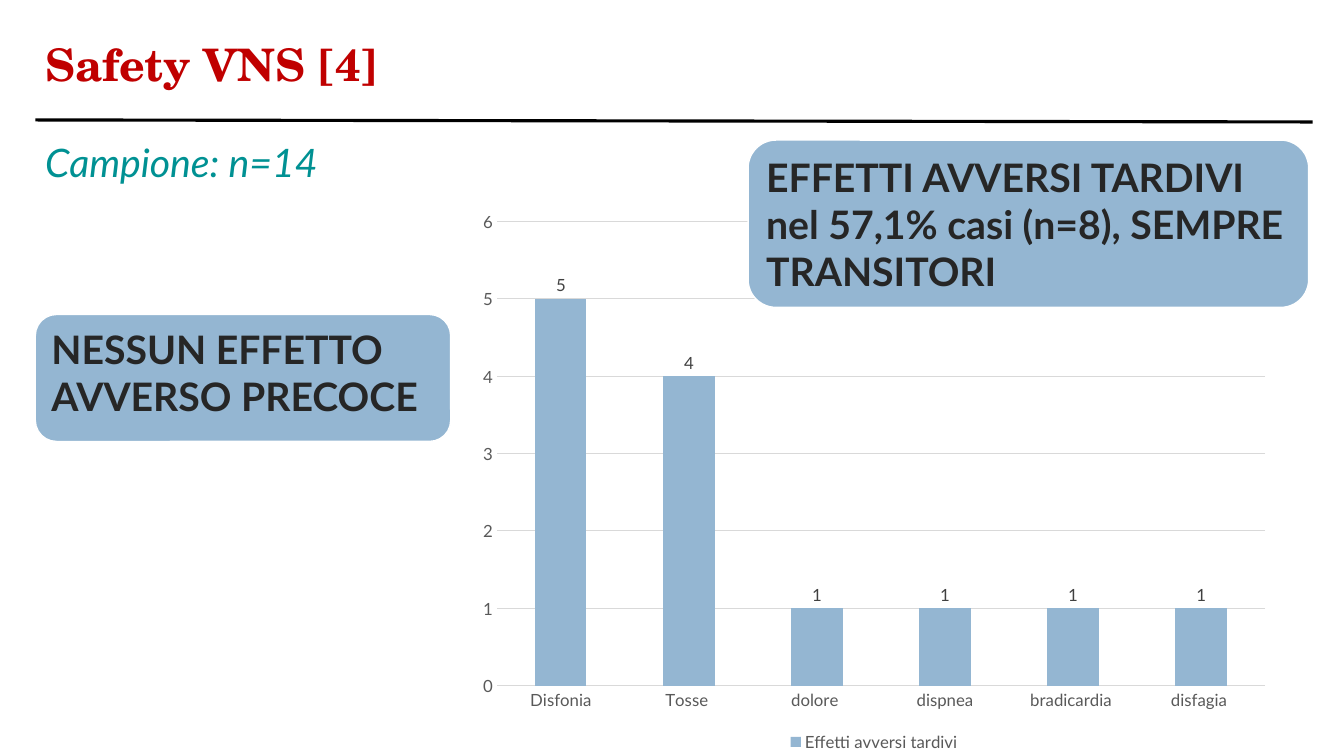
from dataclasses import dataclass

from lxml import etree
from pptx import Presentation
from pptx.chart.data import CategoryChartData
from pptx.dml.color import RGBColor
from pptx.enum.chart import XL_CHART_TYPE, XL_LABEL_POSITION, XL_LEGEND_POSITION, XL_TICK_MARK
from pptx.enum.shapes import MSO_CONNECTOR, MSO_SHAPE
from pptx.enum.text import MSO_ANCHOR, PP_ALIGN
from pptx.oxml.ns import qn
from pptx.util import Inches, Pt

COLUMN = XL_CHART_TYPE.COLUMN_CLUSTERED
OUTSIDE_END = XL_LABEL_POSITION.OUTSIDE_END
LEGEND_BOTTOM = XL_LEGEND_POSITION.BOTTOM
NO_TICK = XL_TICK_MARK.NONE
STRAIGHT = MSO_CONNECTOR.STRAIGHT
ROUNDED = MSO_SHAPE.ROUNDED_RECTANGLE
TOP, MIDDLE = MSO_ANCHOR.TOP, MSO_ANCHOR.MIDDLE
LEFT = PP_ALIGN.LEFT


@dataclass(frozen=True)
class Theme:
    heading_font: str = "TeX Gyre Schola"
    body_font: str = "Lato"
    title_size: float = 32
    body_size: float = 28
    chart_size: float = 12
    red: str = "C00000"
    teal: str = "009193"
    blue: str = "94B6D2"
    white: str = "FFFFFF"
    black: str = "000000"
    dark: str = "262626"
    label: str = "404040"
    axis: str = "595959"
    grid: str = "D9D9D9"


THEME = Theme()


def rgb(value):
    return RGBColor.from_string(value)


def style_font(font, name, size, color, bold=False, italic=False):
    font.name = name
    font.size = Pt(size)
    font.color.rgb = rgb(color)
    font.bold = bold
    font.italic = italic


def write_text(shape, text, anchor, name, size, color, **emphasis):
    frame = shape.text_frame
    frame.word_wrap = True
    frame.vertical_anchor = anchor
    paragraph = frame.paragraphs[0]
    paragraph.alignment = LEFT
    run = paragraph.add_run()
    run.text = text
    style_font(run.font, name, size, color, **emphasis)
    return paragraph


def add_header(slide, box, text):
    left, top, width, height = box
    title = slide.shapes.title
    title.left, title.top, title.width, title.height = map(Inches, box)
    paragraph = write_text(title, text, MIDDLE, THEME.heading_font,
                           THEME.title_size, THEME.red, bold=True)
    paragraph.line_spacing = 0.9
    rule_top = top + 1.25
    rule = slide.shapes.add_connector(
        STRAIGHT, Inches(left), Inches(rule_top),
        Inches(left + width), Inches(rule_top + 0.02))
    rule.line.color.rgb = rgb(THEME.black)
    rule.line.width = Pt(2.25)
    etree.SubElement(rule._element.spPr, qn("a:effectLst"))


def add_sample_size(slide, box, text):
    textbox = slide.shapes.add_textbox(*map(Inches, box))
    write_text(textbox, text, TOP, THEME.body_font, THEME.body_size, THEME.teal, italic=True)


def add_callout(slide, box, text):
    callout = slide.shapes.add_shape(ROUNDED, *map(Inches, box))
    callout.shadow.inherit = False
    callout.fill.solid()
    callout.fill.fore_color.rgb = rgb(THEME.blue)
    callout.line.color.rgb = rgb(THEME.white)
    callout.line.width = Pt(1)
    write_text(callout, text, TOP, THEME.body_font, THEME.body_size, THEME.dark, bold=True)


def style_chart_font(font, color):
    style_font(font, THEME.body_font, THEME.chart_size, color)


def add_effects_chart(slide, box, name, effects):
    data = CategoryChartData()
    data.categories = list(effects)
    data.add_series(name, list(effects.values()))
    chart = slide.shapes.add_chart(COLUMN, *map(Inches, box), data).chart
    style_chart_font(chart.font, THEME.axis)
    chart.has_title = False
    chart.has_legend = True
    chart.legend.position = LEGEND_BOTTOM
    chart.legend.include_in_layout = False
    style_chart_font(chart.legend.font, THEME.axis)

    for axis in (chart.category_axis, chart.value_axis):
        axis.major_tick_mark = axis.minor_tick_mark = NO_TICK
        axis.format.line.fill.background()
        style_chart_font(axis.tick_labels.font, THEME.axis)
    value_axis = chart.value_axis
    value_axis.minimum_scale, value_axis.maximum_scale, value_axis.major_unit = 0, 6, 1
    grid_line = value_axis.major_gridlines.format.line
    grid_line.color.rgb = rgb(THEME.grid)
    grid_line.width = Pt(0.75)

    plot = chart.plots[0]
    plot.gap_width = 150
    plot.vary_by_categories = False
    series = plot.series[0]
    series.format.fill.solid()
    series.format.fill.fore_color.rgb = rgb(THEME.blue)
    labels = series.data_labels
    labels.show_value = True
    labels.position = OUTSIDE_END
    style_chart_font(labels.font, THEME.label)


def build_safety_slide(presentation):
    slide = presentation.slides.add_slide(presentation.slide_layouts[5])
    margin = 0.35
    add_header(slide, (margin, -0.06, 12.67, 1.45), "Safety VNS [4]")
    add_sample_size(slide, (margin, 1.32, 3.23, 0.57), "Campione: n=14")
    effects = {"Disfonia": 5, "Tosse ": 4, "dolore ": 1,
               "dispnea": 1, "bradicardia ": 1, "disfagia ": 1}
    add_effects_chart(slide, (4.63, 1.99, 8.08, 5.51), "Effetti avversi tardivi", effects)
    add_callout(slide, (margin, 3.12, 4.12, 1.26), "NESSUN EFFETTO AVVERSO PRECOCE")
    add_callout(slide, (7.42, 1.39, 5.56, 1.66),
                "EFFETTI AVVERSI TARDIVI nel 57,1% casi (n=8), SEMPRE TRANSITORI")


def main():
    presentation = Presentation()
    presentation.slide_width = Inches(13.33)
    presentation.slide_height = Inches(7.5)
    build_safety_slide(presentation)
    presentation.save("out.pptx")


if __name__ == "__main__":
    main()
